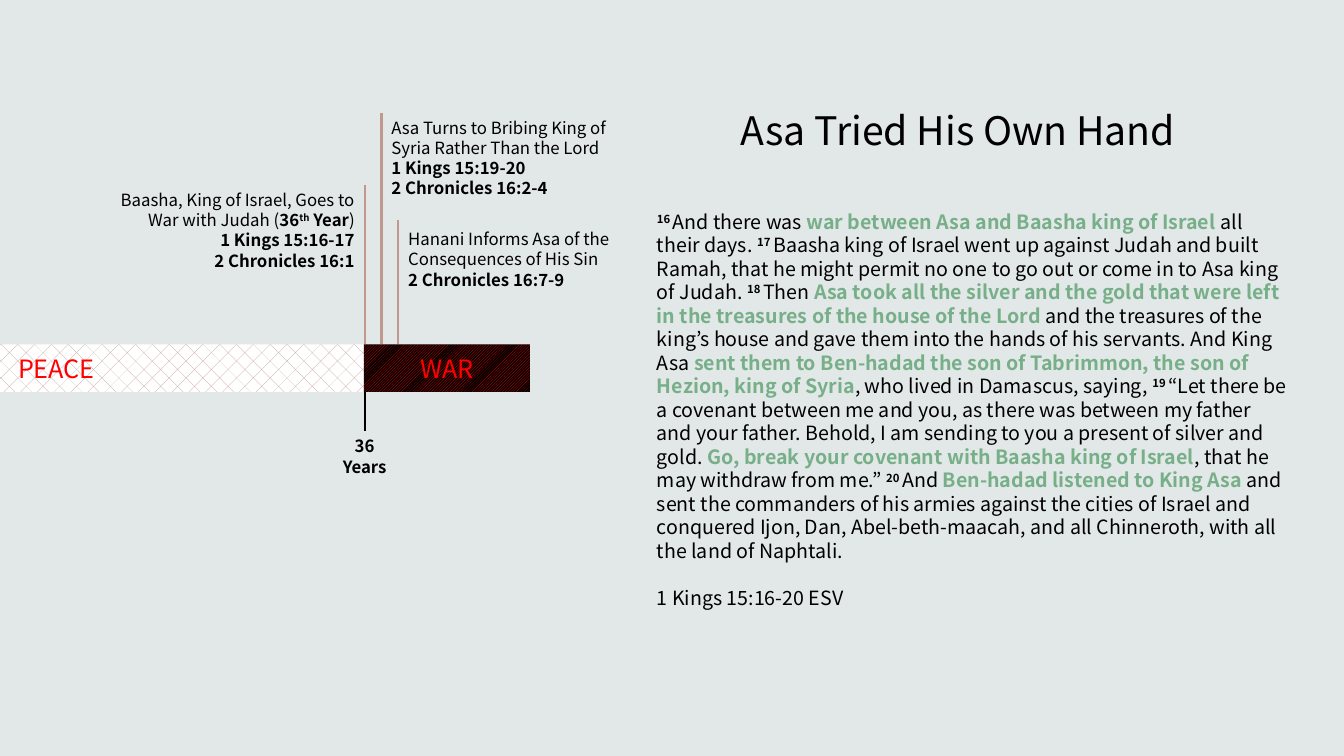
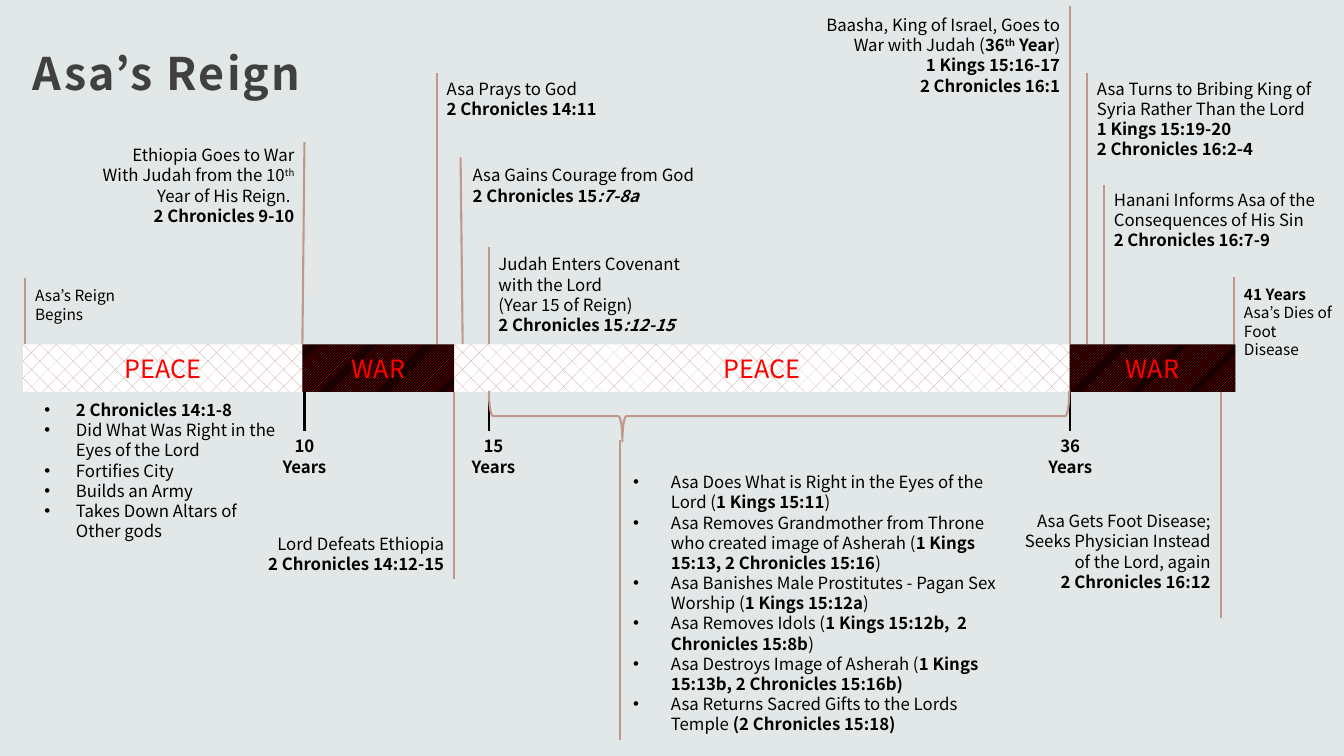
import dataclasses
from typing import Any

import pptx
import pptx.dml.color
import pptx.enum.dml
import pptx.enum.shapes
import pptx.enum.text
import pptx.oxml.xmlchemy
import pptx.shapes.autoshape
import pptx.shapes.connector
import pptx.slide
import pptx.util

Pt = pptx.util.Pt
RGBColor = pptx.dml.color.RGBColor
Align = pptx.enum.text.PP_ALIGN
Anchor = pptx.enum.text.MSO_ANCHOR
Fit = pptx.enum.text.MSO_AUTO_SIZE
Shape = pptx.enum.shapes.MSO_SHAPE
Hatch = pptx.enum.dml.MSO_PATTERN_TYPE

PAPER = RGBColor(0xE2, 0xE7, 0xE8)
BLACK = RGBColor(0, 0, 0)
WHITE = RGBColor(255, 255, 255)
GRAY = RGBColor(0x40, 0x40, 0x40)
RED = RGBColor(255, 0, 0)
GREEN = RGBColor(0x77, 0xAF, 0x88)
CLAY = RGBColor(0xC1, 0x98, 0x8D)

FACE = "Noto Sans CJK JP"
BAR_TOP, BAR_HIGH = 246, 34
BAR_FOOT = BAR_TOP + BAR_HIGH
YEAR_TOP = 308
SHIFT = -504

# First character of a "|" segment -> font values, raised or not
MARKS: dict[str, tuple[dict[str, Any], bool]] = {
    "*": ({"bold": True}, False),
    "/": ({"bold": True, "italic": True}, False),
    "^": ({"bold": True}, True),
    "~": ({}, True),
    "#": ({"bold": True}, False),
}


@dataclasses.dataclass(frozen=True)
class Event:
    x: float
    end: float  # far end of the line: above or below the bar
    width: float
    height: float
    lines: tuple[str, ...]
    top: float  # top of the text
    left: bool = False
    lean: float = 0
    size: float = 12


@dataclasses.dataclass(frozen=True)
class Era:
    start: float
    stop: float
    war: bool


@dataclasses.dataclass(frozen=True)
class Year:
    x: float
    label: str
    nudge: float = 0


ERAS = (Era(16.5, 216, False), Era(216, 324.5, True),
        Era(324.5, 764, False), Era(764, 882.5, True))
YEARS = (Year(217.5, "10"), Year(349, "15", 3.5), Year(764.5, "36"))

LAST_WAR = (
    Event(764.5, 4.5, 196, 65.5,
          ("Baasha, King of Israel, Goes to War with Judah (|*36|^th|* Year|)",
           "*1 Kings 15:16-17", "*2 Chronicles 16:1"), 7, left=True),
    Event(776.5, 52.5, 183, 65.5,
          ("Asa Turns to Bribing King of Syria Rather Than the Lord",
           "*1 Kings 15:19-20", "*2 Chronicles 16:2-4"), 52.5),
    Event(788.5, 132, 171.5, 51,
          ("Hanani Informs Asa of the Consequences of His Sin",
           "*2 Chronicles 16:7-9"), 132),
)
LAST_TOPS = ((132, 132), (80.5, 80.5), (157.5, 160))

REIGN = (
    Event(18, 198.5, 83.5, 34, ("Asa’s Reign Begins",), 201, size=11),
    Event(217.5, 101.5, 154, 65.5,
          ("Ethiopia Goes to War With Judah from the 10|~th| Year of His Reign. ",
           "*2 Chronicles 9-10"), 100, left=True, lean=-1.5),
    Event(312, 52.5, 134, 36, ("Asa Prays to God", "*2 Chronicles 14:11"), 52.5),
    Event(329, 112.5, 187, 36,
          ("Asa Gains Courage from God", "*2 Chronicles 15|/:7-8a"),
          114.5, lean=1.5),
    Event(349, 176.5, 163, 65.5,
          ("Judah Enters Covenant with the Lord", "(Year 15 of Reign)",
           "*2 Chronicles 15|/:12-15"), 178),
    Event(881.5, 198, 78.5, 60.5,
          ("*41 Years", "Asa’s Dies of Foot Disease"), 200, size=11),
    Event(324.5, 413.5, 162.5, 36,
          ("Lord Defeats Ethiopia", "*2 Chronicles 14:12-15"), 377.5, left=True),
    Event(872, 441.5, 147, 80,
          ("Asa Gets Foot Disease; Seeks Physician Instead of the Lord, again",
           "*2 Chronicles 16:12"), 361.5, left=True),
)

PEACE_LIST = ("*2 Chronicles 14:1-8", "Did What Was Right in the Eyes of the Lord",
              "Fortifies City", "Builds an Army", "Takes Down Altars of Other gods")
REFORMS = (
    "Asa Does What is Right in the Eyes of the Lord (|*1 Kings 15:11|)",
    "Asa Removes Grandmother from Throne who created image of Asherah ("
    "|*1 Kings 15:13, 2 Chronicles 15:16|)",
    "Asa Banishes Male Prostitutes - Pagan Sex Worship (|*1 Kings 15:12a|)",
    "Asa Removes Idols (|*1 Kings 15:12b,  2 Chronicles 15:8b|)",
    "Asa Destroys Image of Asherah (|*1 Kings 15:13b, 2 Chronicles 15:16b)",
    "Asa Returns Sacred Gifts to the Lords Temple |*(2 Chronicles 15:18)",
)
VERSES = (
    "^16 |And there was |#war between Asa and Baasha king of Israel |all their days. ",
    "^17 |Baasha king of Israel went up against Judah and built Ramah, that he might "
    "permit no one to go out or come in to Asa king of Judah. ",
    "^18 |Then |#Asa took all the silver and the gold that were left in the treasures "
    "of the house of the Lord |and the treasures of the king’s house and gave them "
    "into the hands of his servants. And King Asa |#sent them to Ben-hadad the son of "
    "Tabrimmon, the son of Hezion, king of Syria|, who lived in Damascus, saying, ",
    "^19 |“Let there be a covenant between me and you, as there was between my father "
    "and your father. Behold, I am sending to you a present of silver and gold. "
    "|#Go, break your covenant with Baasha king of Israel|, that he may withdraw from "
    "me.” ",
    "^20 |And |#Ben-hadad listened to King Asa |and sent the commanders of his "
    "armies against the cities of Israel and conquered Ijon, Dan, Abel-beth-maacah, "
    "and all Chinneroth, with all the land of Naphtali.",
)
SOURCE = "1 Kings 15:16-20 ESV"


def apply(target: Any, values: dict[str, Any]) -> None:
    for name, value in values.items():
        setattr(target, name, value)


def place(shape: Any, left: float, top: float, width: float, height: float) -> None:
    apply(shape, {"left": Pt(left), "top": Pt(top),
                  "width": Pt(width), "height": Pt(height)})


def write(shape: Any, lines: tuple[str, ...], size: float = 12,
          align: Align = Align.LEFT, color: RGBColor = BLACK,
          anchor: Anchor = Anchor.TOP, wrap: bool = True) -> None:
    """Fill a shape with marked-up lines, one paragraph each."""
    frame = shape.text_frame
    apply(frame, {"word_wrap": wrap, "auto_size": Fit.NONE,
                  "vertical_anchor": anchor})
    for at, line in enumerate(lines):
        para = frame.add_paragraph() if at else frame.paragraphs[0]
        apply(para, {"alignment": align, "space_before": Pt(0)})
        for part in line.split("|"):
            mark = part[:1]
            values, raised = MARKS.get(mark, ({}, False))
            run = para.add_run()
            run.text = part[1:] if mark in MARKS else part
            apply(run.font, {"name": FACE, "size": Pt(size), "bold": False, **values})
            run.font.color.rgb = GREEN if mark == "#" else color
            if raised:
                run._r.get_or_add_rPr().set("baseline", "30000")


def indent(shape: Any, width: float) -> None:
    """Hang bullets by width; a width of 0 takes them away."""
    for para in shape.text_frame.paragraphs:
        props = para._p.get_or_add_pPr()
        props.set("marL", str(int(Pt(width))))
        props.set("indent", str(-int(Pt(width))))
        bullet = pptx.oxml.xmlchemy.OxmlElement("a:buChar" if width else "a:buNone")
        if width:
            bullet.set("char", "•")
        props.append(bullet)


def rule(slide: pptx.slide.Slide, x: float, top: float, end_x: float, foot: float,
         color: RGBColor = CLAY) -> pptx.shapes.connector.Connector:
    line = slide.shapes.add_connector(
        pptx.enum.shapes.MSO_CONNECTOR.STRAIGHT, Pt(x), Pt(top), Pt(end_x), Pt(foot))
    line.line.color.rgb = color
    line.line.width = Pt(1.5)
    line._element.spPr.append(pptx.oxml.xmlchemy.OxmlElement("a:effectLst"))
    return line


def shape_at(slide: pptx.slide.Slide, kind: Shape, left: float, top: float,
             width: float, height: float) -> pptx.shapes.autoshape.Shape:
    shape = slide.shapes.add_shape(kind, Pt(left), Pt(top), Pt(width), Pt(height))
    shape.shadow.inherit = False
    return shape


def text_at(slide: pptx.slide.Slide, left: float, top: float, width: float,
            height: float, lines: tuple[str, ...], **style: Any) -> Any:
    box = slide.shapes.add_textbox(Pt(left), Pt(top), Pt(width), Pt(height))
    write(box, lines, **style)
    return box


def draw_event(slide: pptx.slide.Slide, event: Event) -> None:
    foot = BAR_TOP if event.end < BAR_TOP else BAR_FOOT
    rule(slide, event.x, event.end, event.x + event.lean, foot)
    left = event.x - event.width if event.left else event.x + max(event.lean, 0)
    text_at(slide, left, event.top, event.width, event.height, event.lines,
            size=event.size, align=Align.RIGHT if event.left else Align.LEFT)


def draw_era(slide: pptx.slide.Slide, era: Era) -> None:
    bar = shape_at(slide, Shape.RECTANGLE, era.start, BAR_TOP,
                   era.stop - era.start, BAR_HIGH)
    bar.line.fill.background()
    bar.fill.patterned()
    bar.fill.pattern = (Hatch.LIGHT_UPWARD_DIAGONAL if era.war
                        else Hatch.DOTTED_DIAMOND)
    bar.fill.fore_color.rgb = RED if era.war else CLAY
    bar.fill.back_color.rgb = BLACK if era.war else WHITE
    write(bar, ("WAR" if era.war else "PEACE",), size=18, align=Align.CENTER,
          color=RED, anchor=Anchor.MIDDLE)


def draw_year(slide: pptx.slide.Slide, year: Year) -> None:
    box = text_at(slide, year.x + year.nudge - 25, YEAR_TOP, 50, 36,
                  (f"*{year.label}", "*Years"), align=Align.CENTER, wrap=False)
    tick = rule(slide, year.x, BAR_FOOT, year.x, YEAR_TOP, BLACK)
    if not year.nudge:
        tick.end_connect(box, 0)


def draw_time(slide: pptx.slide.Slide, events: tuple[Event, ...],
              eras: tuple[Era, ...], years: tuple[Year, ...]) -> None:
    for draw, items in ((draw_event, events), (draw_era, eras), (draw_year, years)):
        for item in items:
            draw(slide, item)


def build_verse(deck: Any) -> None:
    slide = deck.slides.add_slide(deck.slide_layouts[1])
    title, body = slide.placeholders
    place(title, 522, 72, 347, 41)
    write(title, ("Asa Tried His Own Hand",), size=28, wrap=False)
    place(body, 462, 146, 466.5, 312.5)
    write(body, ("|".join(VERSES), SOURCE), size=14)
    body.text_frame.paragraphs[1].space_before = Pt(16.8)
    indent(body, 0)
    events = tuple(
        dataclasses.replace(event, x=event.x + SHIFT, end=end, top=top)
        for event, (end, top) in zip(LAST_WAR, LAST_TOPS))
    eras = tuple(Era(era.start + SHIFT, era.stop + SHIFT, era.war)
                 for era in ERAS[2:])
    draw_time(slide, events, eras, (Year(YEARS[2].x + SHIFT, "36"),))


def build_reign(deck: Any) -> None:
    slide = deck.slides.add_slide(deck.slide_layouts[3])
    title, peace, reforms = slide.placeholders
    place(title, 16, 17.5, 690, 70.5)
    write(title, ("*Asa’s Reign",), size=32, color=GRAY)
    para = title.text_frame.paragraphs[0]
    para.line_spacing = 1.3
    para.runs[0]._r.get_or_add_rPr().set("spc", "150")
    place(peace, 24.5, 282, 180.5, 108.5)
    write(peace, PEACE_LIST)
    indent(peace, 22.5)
    place(reforms, 445, 333.5, 281.5, 196.5)
    write(reforms, REFORMS)
    indent(reforms, 27)
    draw_time(slide, REIGN + LAST_WAR, ERAS, YEARS)
    brace = shape_at(slide, Shape.LEFT_BRACE, 538.5, 90, 36, 414.5)
    brace.rotation = 270
    brace.adjustments[0], brace.adjustments[1] = 0.08, 0.23
    brace.fill.background()
    brace.line.color.rgb = CLAY
    brace.line.width = Pt(1.5)
    rule(slide, 443, 314.5, 443, 528.5)


def main() -> None:
    deck = pptx.Presentation()
    apply(deck, {"slide_width": Pt(960), "slide_height": Pt(540)})
    back = deck.slide_master.background.fill
    back.solid()
    back.fore_color.rgb = PAPER
    build_verse(deck)
    build_reign(deck)
    deck.save("out.pptx")


if __name__ == "__main__":
    main()
